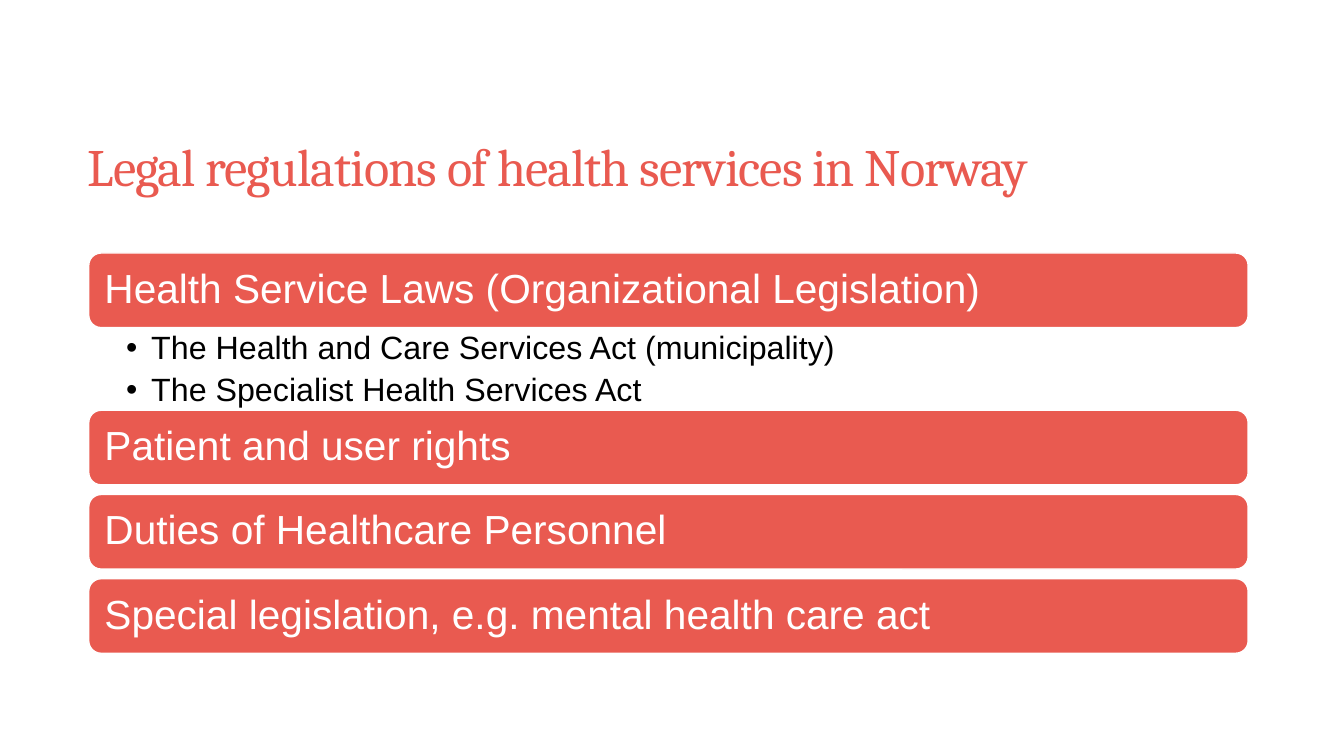
import pptx
import pptx.dml.color
import pptx.enum.shapes
import pptx.enum.text
import pptx.oxml.ns
import pptx.util
from lxml import etree

COLORS = {"coral": "E95A50", "white": "FFFFFF", "black": "000000"}

# Layout, in percent of the slide's width or height
LEFT, WIDTH = 6.6, 86.27
TOP, BANNER_HEIGHT, BANNER_GAP = 33.47, 9.87, 1.27
LIST_HEIGHT = 10.93

# Each section: its banner and the acts listed under it
SECTIONS = [
    ("Health Service Laws (Organizational Legislation)",
     ["The Health and Care Services Act (municipality)",
      "The Specialist Health Services Act"]),
    ("Patient and user rights", []),
    ("Duties of Healthcare Personnel", []),
    ("Special legislation, e.g. mental health care act", []),
]


def rgb(name):
    return pptx.dml.color.RGBColor.from_string(COLORS[name])


def write_text(paragraph, text, *, size, color, font="Arial", line_spacing=0.9,
               after=0, level=0, bullet=None, indent=0.25, tracking=None):
    """Fill one paragraph with formatted text."""
    if bullet:
        properties = paragraph._p.get_or_add_pPr()
        properties.set("marL", str(pptx.util.Inches(indent)))
        properties.set("indent", str(-pptx.util.Inches(indent)))
        for tag, key, value in (("a:buFont", "typeface", font), ("a:buChar", "char", bullet)):
            etree.SubElement(properties, pptx.oxml.ns.qn(tag)).set(key, value)
    paragraph.level = level
    paragraph.alignment = pptx.enum.text.PP_ALIGN.LEFT
    paragraph.line_spacing = line_spacing
    paragraph.space_before = pptx.util.Pt(0)
    paragraph.space_after = pptx.util.Pt(after)
    run = paragraph.add_run()
    run.text = text
    run.font.name = font
    run.font.size = pptx.util.Pt(size)
    run.font.color.rgb = rgb(color)
    if tracking:
        run._r.get_or_add_rPr().set("spc", str(round(tracking * 100)))


class SlideBuilder:
    def __init__(self, presentation):
        self.width = presentation.slide_width
        self.height = presentation.slide_height
        self.slide = presentation.slides.add_slide(presentation.slide_layouts[1])

    def box(self, left, top, width, height):
        """Turn percentages into slide lengths."""
        return [round(share * side / 100) for share, side in
                ((left, self.width), (top, self.height),
                 (width, self.width), (height, self.height))]

    def place(self, shape, *box):
        shape.left, shape.top, shape.width, shape.height = self.box(*box)

    def frame(self, shape, anchor, insets):
        """Set wrapping, anchor and insets (left, top, right, bottom in inches)."""
        frame = shape.text_frame
        frame.word_wrap = True
        frame.auto_size = pptx.enum.text.MSO_AUTO_SIZE.NONE
        frame.vertical_anchor = anchor
        (frame.margin_left, frame.margin_top, frame.margin_right,
         frame.margin_bottom) = map(pptx.util.Inches, insets)
        return frame

    def title(self, text):
        shape = self.slide.shapes.title
        self.place(shape, 6.53, 6.8, WIDTH, 19.33)
        frame = self.frame(shape, pptx.enum.text.MSO_ANCHOR.BOTTOM, (0, 0, 0, 0))
        write_text(frame.paragraphs[0], text, size=37.5, color="coral", font="Cambria",
                   line_spacing=pptx.util.Pt(41), tracking=-0.7)

    def banner(self, text, top):
        shape = self.slide.shapes.add_shape(
            pptx.enum.shapes.MSO_SHAPE.ROUNDED_RECTANGLE,
            *self.box(LEFT, top, WIDTH, BANNER_HEIGHT))
        shape.shadow.inherit = False
        shape.fill.solid()
        shape.fill.fore_color.rgb = rgb("coral")
        shape.line.color.rgb = rgb("white")
        shape.line.width = pptx.util.Pt(1)
        frame = self.frame(shape, pptx.enum.text.MSO_ANCHOR.MIDDLE, (0.12,) * 4)
        write_text(frame.paragraphs[0], text, size=29, color="white")

    def bullets(self, items, top):
        shape = self.slide.placeholders[1]
        self.place(shape, LEFT, top, WIDTH, LIST_HEIGHT)
        frame = self.frame(shape, pptx.enum.text.MSO_ANCHOR.TOP, (0.37, 0.04, 0.23, 0.04))
        for index, item in enumerate(items):
            paragraph = frame.add_paragraph() if index else frame.paragraphs[0]
            write_text(paragraph, item, size=23, color="black", after=5,
                       level=1, bullet="•")


def main():
    presentation = pptx.Presentation()
    presentation.slide_width = pptx.util.Inches(13.33)
    presentation.slide_height = pptx.util.Inches(7.5)
    builder = SlideBuilder(presentation)
    builder.title("Legal regulations of health services in Norway")

    # Stack the banners; a list takes the place of the gap
    top = TOP
    for heading, acts in SECTIONS:
        builder.banner(heading, top)
        top += BANNER_HEIGHT
        if acts:
            builder.bullets(acts, top)
        top += LIST_HEIGHT if acts else BANNER_GAP

    presentation.save("out.pptx")


if __name__ == "__main__":
    main()
